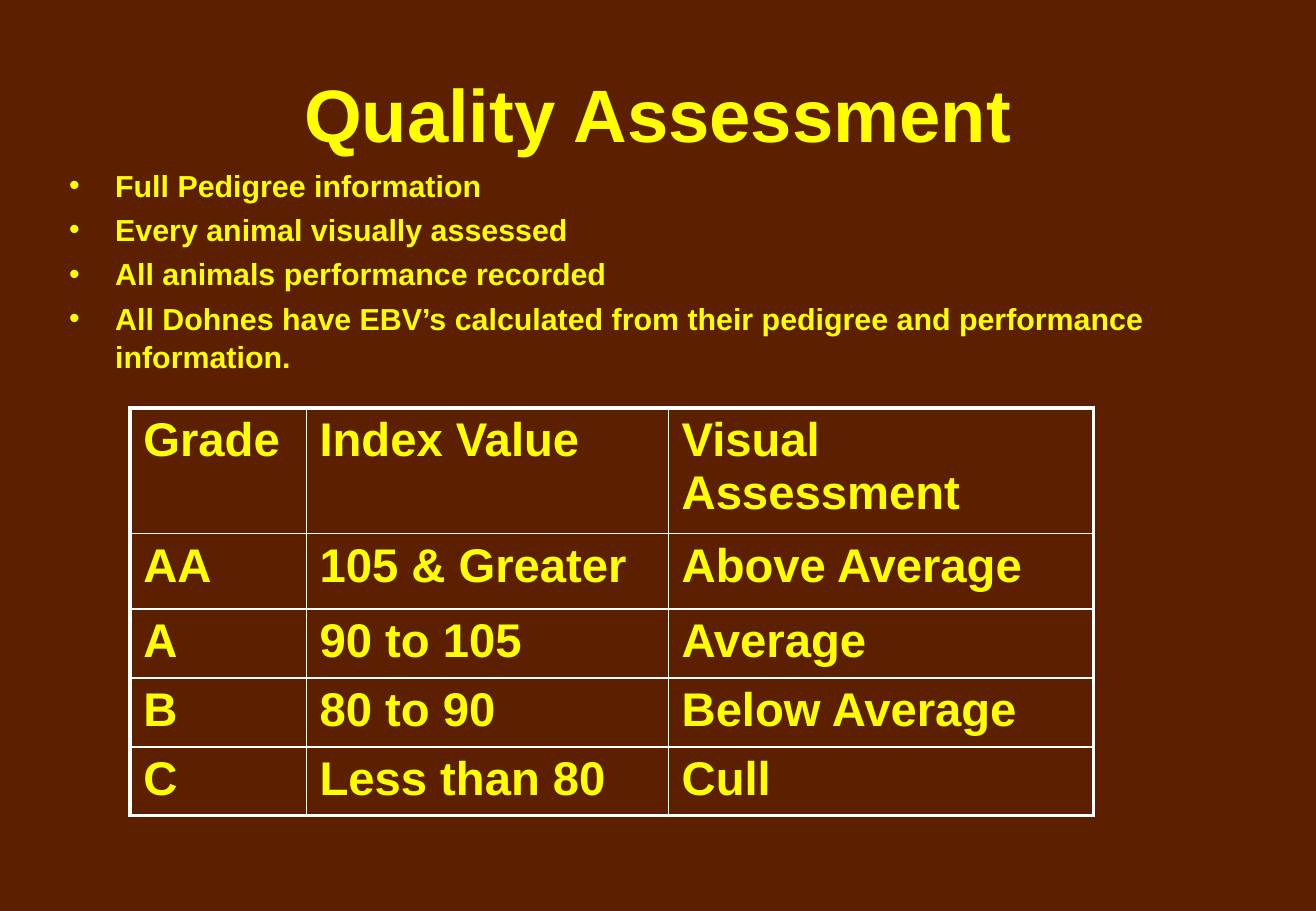
from dataclasses import dataclass

from lxml.etree import SubElement
from pptx import Presentation
from pptx.dml.color import RGBColor
from pptx.enum.text import MSO_ANCHOR, PP_ALIGN
from pptx.oxml.ns import qn
from pptx.util import Inches, Pt

YELLOW = "FFFF00"
WHITE = "FFFFFF"
BROWN = "5C1F00"
OUTER_WIDTH, INNER_WIDTH = 2.25, 1


@dataclass
class Box:
    left: float
    top: float
    width: float
    height: float

    def lengths(self) -> list:
        return [Inches(n) for n in (self.left, self.top, self.width, self.height)]


@dataclass
class Grade:
    name: str
    index_value: str
    assessment: str
    height: float

    def texts(self) -> tuple:
        return self.name, self.index_value, self.assessment


TITLE_BOX = Box(0.54, 0.3, 9.75, 1.25)
BULLET_BOX = Box(0.47, 1.31, 10.37, 1.9)
TABLE_BOX = Box(1.07, 3.36, 7.93, 3.27)
COLUMN_WIDTHS = (1.45, 2.98, 3.5)
BULLETS = (
    "Full Pedigree information",
    "Every animal visually assessed",
    "All animals performance recorded",
    "All Dohnes have EBV’s calculated from their pedigree and performance information.",
)
GRADES = (
    Grade("Grade", "Index Value", "Visual Assessment", 1.02),
    Grade("AA", "105 & Greater", "Above Average", 0.62),
    Grade("A", "90 to 105", "Average", 0.55),
    Grade("B", "80 to 90", "Below Average", 0.54),
    Grade("C", "Less than 80", "Cull", 0.54),
)


def color(code: str) -> RGBColor:
    return RGBColor.from_string(code)


def apply_format(target, values: dict) -> None:
    for name, value in values.items():
        setattr(target, name, value)


def write(para, text: str, size: float) -> None:
    span = para.add_run()
    span.text = text
    apply_format(span.font, {"name": "Arial", "size": Pt(size), "bold": True})
    span.font.color.rgb = color(YELLOW)


def add_title(page) -> None:
    title = page.shapes.title
    title.left, title.top, title.width, title.height = TITLE_BOX.lengths()
    apply_format(title.text_frame, {"vertical_anchor": MSO_ANCHOR.MIDDLE, "word_wrap": True})
    para = title.text_frame.paragraphs[0]
    para.alignment = PP_ALIGN.CENTER
    write(para, "Quality Assessment", 44)


def add_bullets(page) -> None:
    frame = page.shapes.add_textbox(*BULLET_BOX.lengths()).text_frame
    frame.word_wrap = True
    for number, text in enumerate(BULLETS):
        para = frame.add_paragraph() if number else frame.paragraphs[0]
        apply_format(para, {"space_before": Pt(3.6), "line_spacing": 1.05})
        properties = para._p.get_or_add_pPr()
        properties.set("marL", str(Inches(0.38)))
        properties.set("indent", str(-Inches(0.38)))
        SubElement(properties, qn("a:buFont")).set("typeface", "Arial")
        SubElement(properties, qn("a:buChar")).set("char", "•")
        write(para, text, 18)


def set_borders(cell, widths: dict) -> None:
    properties = cell._tc.get_or_add_tcPr()
    for side, width in widths.items():
        line = SubElement(properties, qn(f"a:ln{side}"))
        line.set("w", str(Pt(width)))
        fill = SubElement(line, qn("a:solidFill"))
        SubElement(fill, qn("a:srgbClr")).set("val", WHITE)


def add_grades(page) -> None:
    last_row, last_column = len(GRADES) - 1, len(COLUMN_WIDTHS) - 1
    table = page.shapes.add_table(last_row + 1, last_column + 1, *TABLE_BOX.lengths()).table
    apply_format(table, {"first_row": False, "horz_banding": False})
    for column, width in zip(table.columns, COLUMN_WIDTHS):
        column.width = Inches(width)
    margins = {
        "margin_left": Inches(0.11), "margin_right": Inches(0.11),
        "margin_top": Inches(0.05), "margin_bottom": Inches(0.05),
    }
    for row, grade in enumerate(GRADES):
        table.rows[row].height = Inches(grade.height)
        for column, text in enumerate(grade.texts()):
            cell = table.cell(row, column)
            apply_format(cell, margins)
            outer = {"L": column == 0, "R": column == last_column,
                     "T": row == 0, "B": row == last_row}
            set_borders(cell, {side: OUTER_WIDTH if edge else INNER_WIDTH
                               for side, edge in outer.items()})
            cell.fill.background()
            para = cell.text_frame.paragraphs[0]
            para.space_before = Pt(5.6)
            write(para, text, 28)


def main() -> None:
    deck = Presentation()
    apply_format(deck, {"slide_width": Inches(10.83), "slide_height": Inches(7.5)})
    page = deck.slides.add_slide(deck.slide_layouts[5])
    page.background.fill.solid()
    page.background.fill.fore_color.rgb = color(BROWN)
    add_title(page)
    add_bullets(page)
    add_grades(page)
    deck.save("out.pptx")


if __name__ == "__main__":
    main()
